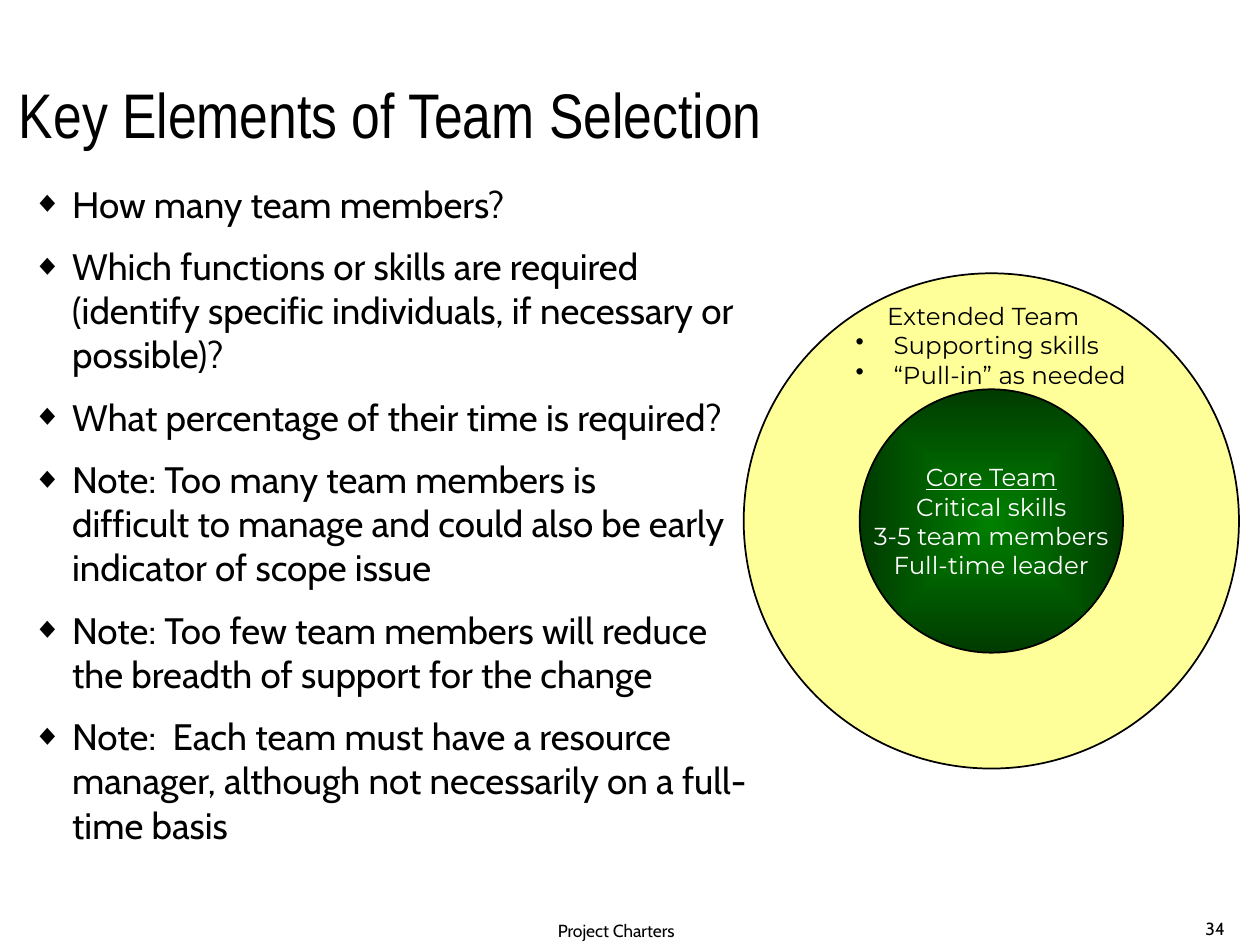
from lxml import etree
from pptx import Presentation
from pptx.dml.color import RGBColor
from pptx.enum.shapes import MSO_SHAPE
from pptx.enum.text import MSO_ANCHOR, MSO_AUTO_SIZE, PP_ALIGN
from pptx.oxml.ns import qn
from pptx.util import Pt

OVAL = MSO_SHAPE.OVAL
TOP, MIDDLE, BOTTOM = MSO_ANCHOR.TOP, MSO_ANCHOR.MIDDLE, MSO_ANCHOR.BOTTOM
LEFT, CENTER = PP_ALIGN.LEFT, PP_ALIGN.CENTER
NO_AUTOFIT = MSO_AUTO_SIZE.NONE

COLORS = {
    "ink": "000000",
    "light": "FFFFFF",
    "extended": "FFFF99",
    "core_center": "008000",
    "core_edge": "003B00",
}
TITLE_FONT = {"name": "Arial Narrow", "size": Pt(36)}
BODY_FONT = {"name": "Cabin", "size": Pt(21)}
FOOTER_FONT = {"name": "Cabin", "size": Pt(10)}
TEAM_FONT = {"name": "Montserrat", "size": Pt(14)}

QUESTIONS = [
    "How many team members?",
    "Which functions or skills are required (identify specific individuals, if necessary or possible)?",
    "What percentage of their time is required?",
    "Note: Too many team members is \vdifficult to manage and could also be early indicator of scope issue",
    "Note: Too few team members will reduce the breadth of support for the change",
    "Note:  Each team must have a resource manager, although not necessarily on a full-time basis",
]
EXTENDED_TEAM = ["Extended Team", " Supporting skills", " “Pull-in” as needed"]
CORE_TEAM = ["Core Team", "Critical skills", "3-5 team members", "Full-time leader"]


def color(name):
    return RGBColor.from_string(COLORS[name])


def set_attributes(target, values):
    for name, value in values.items():
        setattr(target, name, value)


def place(shape, box):
    set_attributes(shape, dict(zip(("left", "top", "width", "height"), map(Pt, box))))


def write(shape, lines, font, ink="ink", align=LEFT, anchor=TOP, wrap=True):
    frame = shape.text_frame
    frame.text = "\n".join(lines)
    set_attributes(frame, {"auto_size": NO_AUTOFIT, "word_wrap": wrap, "vertical_anchor": anchor})
    for paragraph in frame.paragraphs:
        paragraph.alignment = align
        for run in paragraph.runs:
            set_attributes(run.font, font)
            run.font.color.rgb = color(ink)
    return frame.paragraphs


def add_bullet(paragraph, character, indent, percent=100):
    properties = paragraph._p.get_or_add_pPr()
    properties.set("marL", str(Pt(indent)))
    properties.set("indent", str(-Pt(indent)))
    bullet_color = etree.SubElement(properties, qn("a:buClr"))
    etree.SubElement(bullet_color, qn("a:srgbClr"), val=COLORS["ink"])
    etree.SubElement(properties, qn("a:buSzPct"), val=str(percent * 1000))
    etree.SubElement(properties, qn("a:buChar"), char=character)


def fill_title(shape, box):
    place(shape, box)
    paragraph = write(shape, ["Key Elements of Team Selection"], TITLE_FONT, anchor=BOTTOM)[0]
    paragraph.line_spacing = 0.9


def fill_questions(shape, box):
    place(shape, box)
    for paragraph in write(shape, QUESTIONS, BODY_FONT):
        paragraph.space_before = Pt(10.5)
        add_bullet(paragraph, "◆", 22.5, 80)


def add_text(slide, box, lines, font, **layout):
    shape = slide.shapes.add_textbox(*map(Pt, box))
    return write(shape, lines, font, **layout)


def add_circle(slide, center_x, center_y, diameter):
    left, top = center_x - diameter / 2, center_y - diameter / 2
    circle = slide.shapes.add_shape(OVAL, Pt(left), Pt(top), Pt(diameter), Pt(diameter))
    circle.shadow.inherit = False
    circle.line.color.rgb = color("ink")
    circle.line.width = Pt(1)
    return circle


def fill_from_center(shape, inner, outer):
    shape.fill.gradient()
    for stop, name in zip(shape.fill.gradient_stops, (inner, outer)):
        stop.color.rgb = color(name)
    gradient = shape._element.spPr.find(qn("a:gradFill"))
    gradient.remove(gradient.find(qn("a:lin")))
    focus = etree.SubElement(gradient, qn("a:path"), {"path": "shape"})
    etree.SubElement(focus, qn("a:fillToRect"), dict.fromkeys("ltrb", "50000"))


def add_team_circles(slide, box):
    left, top, width, height = box
    center_x, center_y = left + width / 2, top + height / 2
    extended = add_circle(slide, center_x, center_y, width)
    extended.fill.solid()
    extended.fill.fore_color.rgb = color("extended")

    label_box = (left + 56.9, top + 12.2, 171, 58)
    heading, *details = add_text(slide, label_box, EXTENDED_TEAM, TEAM_FONT)
    heading._p.get_or_add_pPr().set("marL", str(Pt(18)))
    for paragraph in details:
        add_bullet(paragraph, "•", 18)

    core = add_circle(slide, center_x, center_y, 150.5)
    fill_from_center(core, "core_center", "core_edge")
    heading = write(core, CORE_TEAM, TEAM_FONT, "light", CENTER, MIDDLE, wrap=False)[0]
    heading.runs[0].font.underline = True


def add_footer(slide, box):
    left, top, width, height = box
    add_text(slide, (left, top, 481, height), ["Project Charters"], FOOTER_FONT, align=CENTER)
    add_text(slide, (left + width - 31, top, 31, height), ["34"], FOOTER_FONT, anchor=BOTTOM)


def main():
    presentation = Presentation()
    set_attributes(presentation, {"slide_width": Pt(720), "slide_height": Pt(540)})
    slide = presentation.slides.add_slide(presentation.slide_layouts[1])
    fill_title(slide.shapes.title, (3.6, 0.7, 598, 90))
    fill_questions(slide.placeholders[1], (11.5, 100, 426, 411))
    add_team_circles(slide, (425, 156.2, 283, 283))
    add_footer(slide, (111.6, 522, 601.2, 18))
    presentation.save("out.pptx")


if __name__ == "__main__":
    main()
